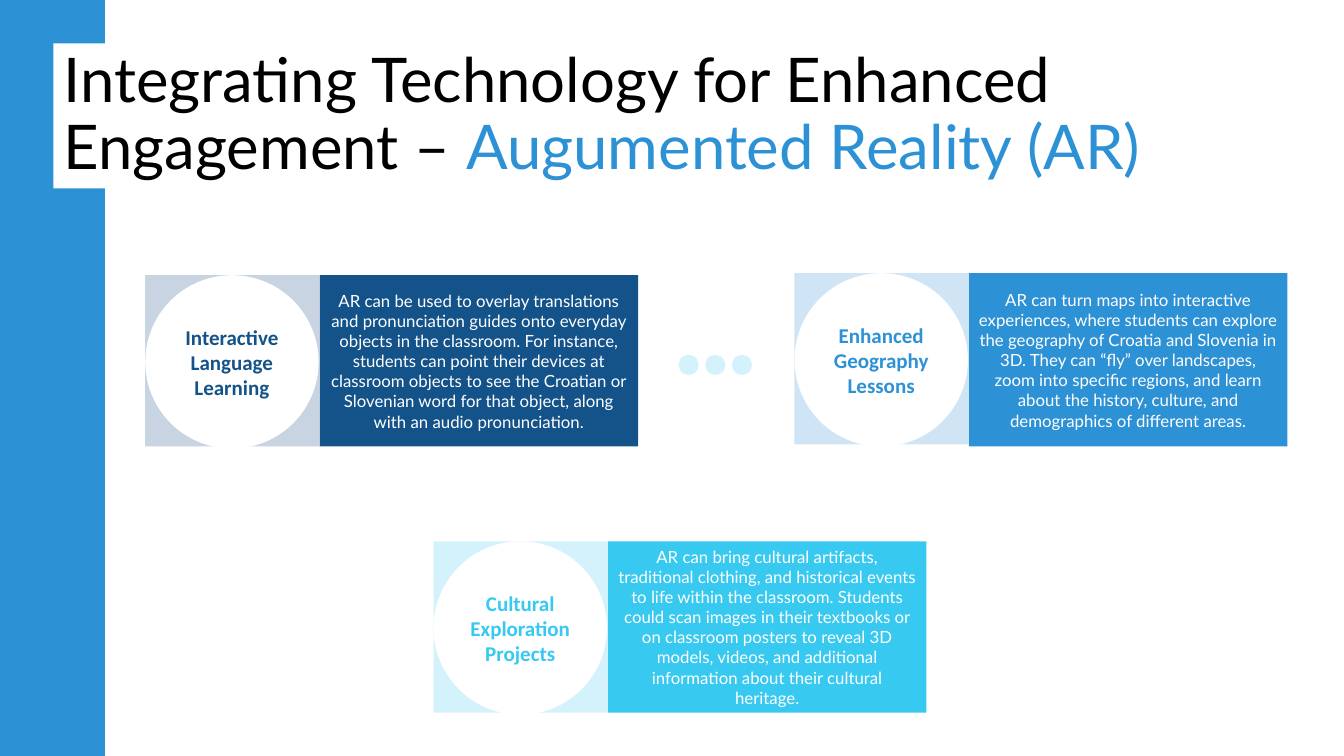
from dataclasses import dataclass

from pptx import Presentation
from pptx.dml.color import RGBColor
from pptx.enum.shapes import MSO_SHAPE as Preset
from pptx.enum.text import MSO_ANCHOR as Anchor, MSO_AUTO_SIZE as AutoSize, PP_ALIGN as Align
from pptx.util import Inches, Pt


@dataclass(frozen=True)
class Theme:
    white: str = "FFFFFF"
    black: str = "000000"
    blue: str = "2C91D5"
    navy: str = "145389"
    cyan: str = "37C9F0"
    pale_blue: str = "CFE4F5"
    pale_navy: str = "C8D4E2"
    pale_cyan: str = "D4F2FC"
    main_font: str = "Lato"
    label_font: str = "Calibri"
    title_size: int = 44
    label_size: int = 15
    body_size: int = 12


THEME = Theme()

# Each card: left, top, panel width, panel height, strong colour, pale colour, label, text
CARDS = [
    (1.44, 2.73, 3.16, 1.7, THEME.navy, THEME.pale_navy, "Interactive Language Learning",
     "AR can be used to overlay translations and pronunciation guides onto everyday objects "
     "in the classroom. For instance, students can point their devices at classroom objects "
     "to see the Croatian or Slovenian word for that object, along with an audio "
     "pronunciation."),
    (4.3, 5.37, 3.16, 1.7, THEME.cyan, THEME.pale_cyan, "Cultural Exploration Projects",
     "AR can bring cultural artifacts, traditional clothing, and historical events to life "
     "within the classroom. Students could scan images in their textbooks or on classroom "
     "posters to reveal 3D models, videos, and additional information about their cultural "
     "heritage."),
    (7.88, 2.71, 3.16, 1.72, THEME.blue, THEME.pale_blue, "Enhanced Geography Lessons",
     "AR can turn maps into interactive experiences, where students can explore the "
     "geography of Croatia and Slovenia in 3D. They can “fly” over landscapes, zoom into "
     "specific regions, and learn about the history, culture, and demographics of "
     "different areas."),
]


def add_block(slide, preset, left, top, width, height, color):
    shape = slide.shapes.add_shape(
        preset, Inches(left), Inches(top), Inches(width), Inches(height))
    shape.shadow.inherit = False
    shape.fill.solid()
    shape.fill.fore_color.rgb = RGBColor.from_string(color)
    shape.line.fill.background()
    return shape


def add_run(paragraph, text, font_name, size, color, bold=False):
    run = paragraph.add_run()
    run.text = text
    run.font.name = font_name
    run.font.size = Pt(size)
    run.font.bold = bold
    run.font.color.rgb = RGBColor.from_string(color)


def write_centred(shape, text, font_name, size, color, bold=False):
    frame = shape.text_frame
    frame.word_wrap = True
    frame.vertical_anchor = Anchor.MIDDLE
    paragraph = frame.paragraphs[0]
    paragraph.alignment = Align.CENTER
    add_run(paragraph, text, font_name, size, color, bold)


def add_title(slide, left, top, width, height):
    title = slide.shapes.title
    title.left, title.top = Inches(left), Inches(top)
    title.width, title.height = Inches(width), Inches(height)
    title.fill.solid()
    title.fill.fore_color.rgb = RGBColor.from_string(THEME.white)
    # Bring the title in front of the side bar
    title.element.getparent().append(title.element)

    frame = title.text_frame
    frame.word_wrap = True
    frame.auto_size = AutoSize.NONE
    frame.vertical_anchor = Anchor.MIDDLE
    paragraph = frame.paragraphs[0]
    paragraph.alignment = Align.LEFT
    paragraph.line_spacing = 0.9
    for text, color in (
        ("Integrating Technology for Enhanced Engagement – ", THEME.black),
        ("Augumented Reality (AR)", THEME.blue),
    ):
        add_run(paragraph, text, THEME.main_font, THEME.title_size, color)


def add_card(slide, left, top, panel_width, panel_height, strong, pale, label, text):
    tile_width, tile_height, disc_size = 1.73, 1.7, 1.72
    # Text panel on the right
    panel = add_block(slide, Preset.RECTANGLE, left + tile_width, top,
                      panel_width, panel_height, strong)
    write_centred(panel, text, THEME.main_font, THEME.body_size, THEME.white)
    # Pale tile with a white disc on the left
    add_block(slide, Preset.RECTANGLE, left, top, tile_width, tile_height, pale)
    disc = add_block(slide, Preset.OVAL, left, top, disc_size, disc_size, THEME.white)
    disc.text_frame.margin_left = disc.text_frame.margin_right = Inches(0.05)
    write_centred(disc, label, THEME.label_font, THEME.label_size, strong, bold=True)


def add_dots(slide, left, top, width, size, count=3):
    step = (width - size) / (count - 1)
    for index in range(count):
        add_block(slide, Preset.OVAL, left + index * step, top, size, size, THEME.pale_cyan)


def main():
    presentation = Presentation()
    presentation.slide_width = Inches(13.33)
    presentation.slide_height = Inches(7.5)
    title_only = presentation.slide_layouts[5]
    slide = presentation.slides.add_slide(title_only)

    # Side bar and title
    add_block(slide, Preset.RECTANGLE, 0, 0, 1.04, 7.5, THEME.blue)
    add_title(slide, 0.53, 0.43, 12.12, 1.44)

    # Three cards, with dots between the upper two
    for card in CARDS:
        add_card(slide, *card)
    add_dots(slide, 6.73, 3.52, 0.73, 0.2)

    presentation.save("out.pptx")


if __name__ == "__main__":
    main()
